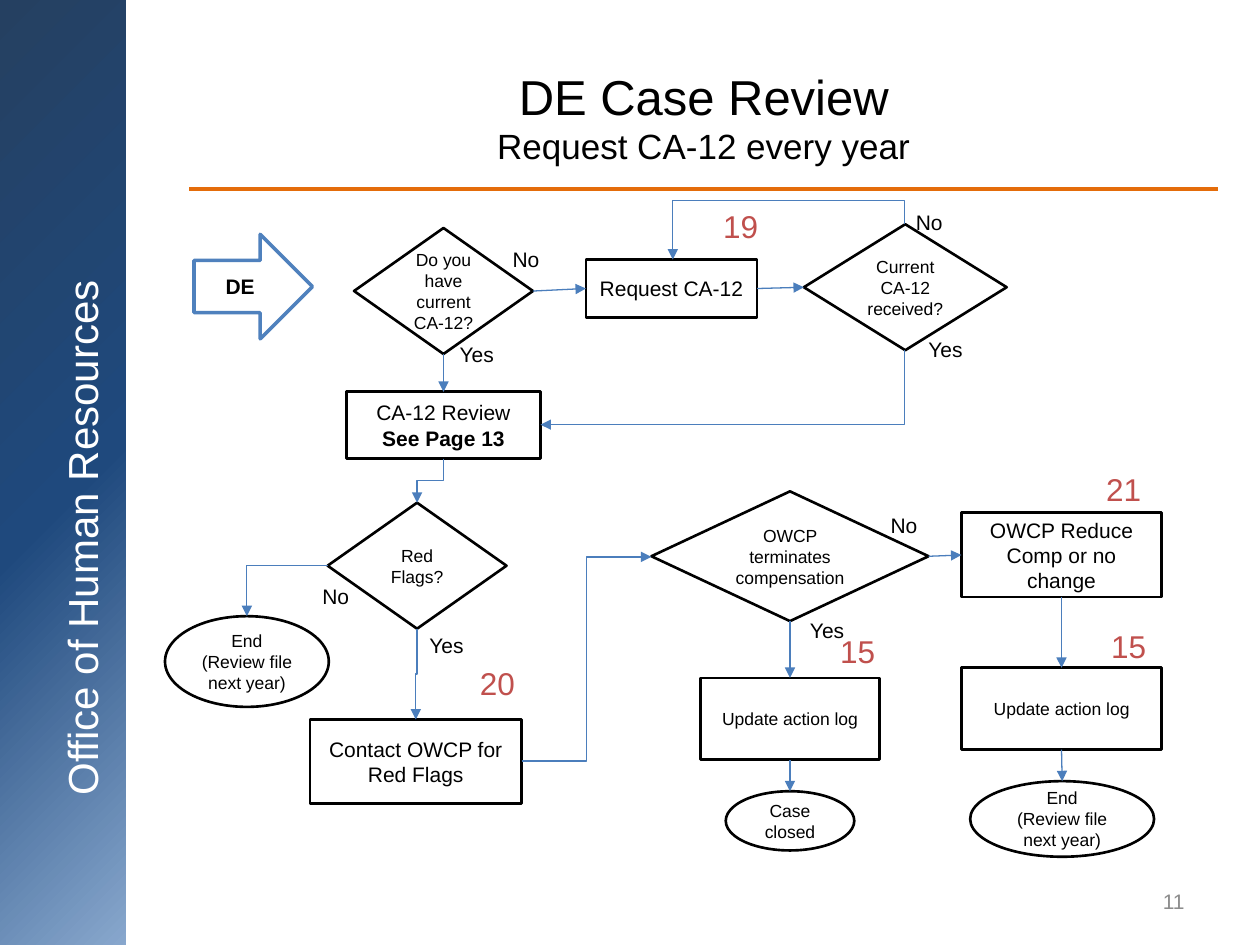
from copy import deepcopy

from lxml.etree import SubElement
from pptx import Presentation
from pptx.dml.color import RGBColor as RGB
from pptx.enum.shapes import MSO_CONNECTOR as LINK
from pptx.enum.shapes import MSO_SHAPE as SHAPE
from pptx.enum.text import MSO_ANCHOR as ANCHOR
from pptx.enum.text import PP_ALIGN as ALIGN
from pptx.oxml.ns import qn
from pptx.util import Inches, Pt

BLACK = RGB(0x00, 0x00, 0x00)
WHITE = RGB(0xFF, 0xFF, 0xFF)
GRAY = RGB(0x8C, 0x8C, 0x8C)
RED = RGB(0xC0, 0x50, 0x4D)
ORANGE = RGB(0xE4, 0x6C, 0x0A)
BLUE = RGB(0x4F, 0x81, 0xBD)
STEEL = RGB(0x4B, 0x7E, 0xBC)
NAVY = RGB(0x25, 0x40, 0x61)
ROYAL = RGB(0x1F, 0x49, 0x7D)
SKY = RGB(0x95, 0xB3, 0xD7)
FACE = "Arial"
TOP, LEFT, BOTTOM, RIGHT = range(4)


class Chart:
    def __init__(self, slide):
        self.shapes = slide.shapes

    def style(self, font, size, color, bold=None):
        font.name, font.size, font.bold = FACE, Pt(size), bold
        font.color.rgb = color

    def fill_in(self, shape, text, size, color=BLACK, align=ALIGN.CENTER, bold=()):
        frame = shape.text_frame
        frame.vertical_anchor = ANCHOR.MIDDLE
        frame.text = text
        for i, para in enumerate(frame.paragraphs):
            para.alignment = align
            self.style(para.font, size, color, True if i in bold else None)

    def node(self, kind, box, text, size=10, bold=()):
        shape = self.shapes.add_shape(kind, *map(Inches, box))
        shape.shadow.inherit = False
        shape.fill.background()
        shape.line.color.rgb = BLACK
        shape.line.width = Pt(1.5)
        self.fill_in(shape, text, size, bold=bold)
        return shape

    def text(self, box, text, size, color=BLACK, align=ALIGN.CENTER, wrap=True):
        shape = self.shapes.add_textbox(*map(Inches, box))
        shape.text_frame.word_wrap = wrap
        self.fill_in(shape, text, size, color, align)
        return shape

    def label(self, left, top, text):
        wide = 0.42 if text == "No" else 0.48
        self.text((left, top, wide, 0.3), text, 12, align=ALIGN.LEFT, wrap=False)

    def number(self, left, top, text):
        self.text((left, top, 0.48, 0.4), text, 18, RED, ALIGN.LEFT, False)

    def title(self, box, lines):
        shape = self.shapes.add_textbox(*map(Inches, box))
        frame = shape.text_frame
        frame.word_wrap = True
        frame.vertical_anchor = ANCHOR.MIDDLE
        para = frame.paragraphs[0]
        para.alignment = ALIGN.CENTER
        for i, (text, size) in enumerate(lines):
            if i:
                para.add_line_break()
            run = para.add_run()
            run.text = text
            self.style(run.font, size, BLACK)

    def wave(self, curve, stops, steps=60):
        points = []
        for i in range(steps + 1):
            t = i / steps
            parts = ((1 - t) ** 3, 3 * t * (1 - t) ** 2, 3 * t**2 * (1 - t), t**3)
            points.append([sum(k * p[n] for k, p in zip(parts, curve)) for n in (0, 1)])
        points += [(0, curve[-1][1]), (0, 0)]
        pen = self.shapes.build_freeform(*points[0], scale=Inches(1))
        pen.add_line_segments(points[1:], close=True)
        shape = pen.convert_to_shape()
        shape.shadow.inherit = False
        shape.line.fill.background()
        shape.fill.gradient()
        shape.fill.gradient_angle = 315
        group = next(shape._element.iter(qn("a:gsLst")))
        group.append(deepcopy(group[0]))
        for stop, (place, color) in zip(shape.fill.gradient_stops, stops):
            stop.position, stop.color.rgb = place, color

    def line(self, kind, start, end, color=STEEL, width=0.75, head=True):
        link = self.shapes.add_connector(kind, *map(Inches, (*start, *end)))
        link.line.color.rgb = color
        link.line.width = Pt(width)
        props = link._element.spPr
        if head:
            SubElement(props.find(qn("a:ln")), qn("a:tailEnd"), type="triangle")
        SubElement(props, qn("a:effectLst"))
        return link

    def join(self, first, site, last, goal):
        link = self.line(LINK.STRAIGHT, (0, 0), (1, 1))
        link.begin_connect(first, site)
        link.end_connect(last, goal)

    def bend(self, start, end, down=False, corner=False, mid=None):
        if down:
            (x1, y1), (x2, y2) = start, end
            x, y = (x1 + x2) / 2, (y1 + y2) / 2
            w, h = abs(y2 - y1) / 2, abs(x2 - x1) / 2
            start, end = (x - w, y - h), (x + w, y + h)
        link = self.line(LINK.ELBOW, start, end)
        props = link._element.spPr
        if down:
            props.find(qn("a:xfrm")).set("rot", "5400000")
        shape = props.find(qn("a:prstGeom"))
        if corner:
            shape.set("prst", "bentConnector2")
        if mid is not None:
            guides = shape.find(qn("a:avLst"))
            SubElement(guides, qn("a:gd"), name="adj1", fmla=f"val {round(mid * 100000)}")


def main():
    deck = Presentation()
    deck.slide_width, deck.slide_height = Inches(10), Inches(7.5)
    c = Chart(deck.slides.add_slide(deck.slide_layouts[6]))

    c.wave([(1.11, 0), (1.84, 2.51), (0.72, 4.46), (1.33, 7.5)],
           [(0, NAVY), (0.5, ROYAL), (1, SKY)])
    side = c.text((-2.09, 3.99, 5.47, 0.56), "Office of Human Resources", 24, WHITE)
    side.rotation = 270
    c.line(LINK.STRAIGHT, (1.5, 1.5), (9.67, 1.5), ORANGE, 2.25, False)
    c.title((1.5, 0.3, 8.17, 1.25),
            [("DE Case Review", 28), ("Request CA-12 every year", 20)])
    c.text((7.17, 6.95, 2.33, 0.4), "11", 12, GRAY, ALIGN.RIGHT)

    entry = c.node(SHAPE.RIGHT_ARROW, (1.54, 1.86, 0.94, 0.83), "DE", 12, (0,))
    entry.fill.solid()
    entry.fill.fore_color.rgb = WHITE
    entry.line.color.rgb = BLUE
    entry.line.width = Pt(2)

    rect, gem, oval = SHAPE.RECTANGLE, SHAPE.DIAMOND, SHAPE.OVAL
    log, done = "Update action log", "End\n(Review file next year)"
    have = c.node(gem, (2.81, 1.81, 1.42, 1), "Do you have current CA-12?")
    ask = c.node(rect, (4.65, 2.06, 1.36, 0.46), "Request CA-12", 12)
    got = c.node(gem, (6.38, 1.78, 1.61, 1), "Current CA-12 received?")
    check = c.node(rect, (2.75, 3.11, 1.54, 0.53), "CA-12 Review\nSee Page 13", 12, (1,))
    c.node(gem, (2.6, 3.99, 1.42, 1), "Red Flags?")
    c.node(oval, (1.31, 4.89, 1.3, 0.72), done)
    c.node(rect, (2.46, 5.71, 1.68, 0.67), "Contact OWCP for Red Flags", 12)
    stop = c.node(gem, (5.17, 3.9, 2.2, 1.03), "OWCP terminates compensation")
    cut = c.node(rect, (7.63, 4.07, 1.59, 0.67), "OWCP Reduce Comp or no change", 12)
    log1 = c.node(rect, (5.56, 5.38, 1.42, 0.65), log)
    log2 = c.node(rect, (7.63, 5.3, 1.59, 0.65), log)
    closed = c.node(oval, (5.76, 6.28, 1.02, 0.47), "Case closed")
    final = c.node(oval, (7.7, 6.2, 1.46, 0.6), done)

    for first, site, last, goal in [
        (have, RIGHT, ask, LEFT), (ask, RIGHT, got, LEFT),
        (have, BOTTOM, check, TOP), (stop, RIGHT, cut, LEFT),
        (stop, BOTTOM, log1, TOP), (log1, BOTTOM, closed, TOP),
        (cut, BOTTOM, log2, TOP), (log2, BOTTOM, final, TOP),
    ]:
        c.join(first, site, last, goal)

    c.bend((7.18, 1.78), (5.34, 2.06), down=True, mid=-0.67)
    c.bend((7.18, 2.78), (4.29, 3.37), down=True, corner=True)
    c.bend((3.52, 3.64), (3.31, 3.99), down=True)
    c.bend((3.31, 4.99), (3.3, 5.71), down=True)
    c.bend((2.6, 4.49), (1.96, 4.89), corner=True)
    c.bend((4.14, 6.04), (5.17, 4.42))

    for left, top in [(3.97, 1.91), (7.17, 1.61), (2.46, 4.58), (6.97, 4.02)]:
        c.label(left, top, "No")
    for left, top in [(3.55, 2.66), (7.27, 2.62), (3.31, 4.97), (6.33, 4.85)]:
        c.label(left, top, "Yes")
    for left, top, text in [(5.64, 1.59, "19"), (3.71, 5.22, "20"), (8.68, 3.68, "21"),
                            (8.72, 4.93, "15"), (6.57, 4.97, "15")]:
        c.number(left, top, text)

    deck.save("out.pptx")


if __name__ == "__main__":
    main()
